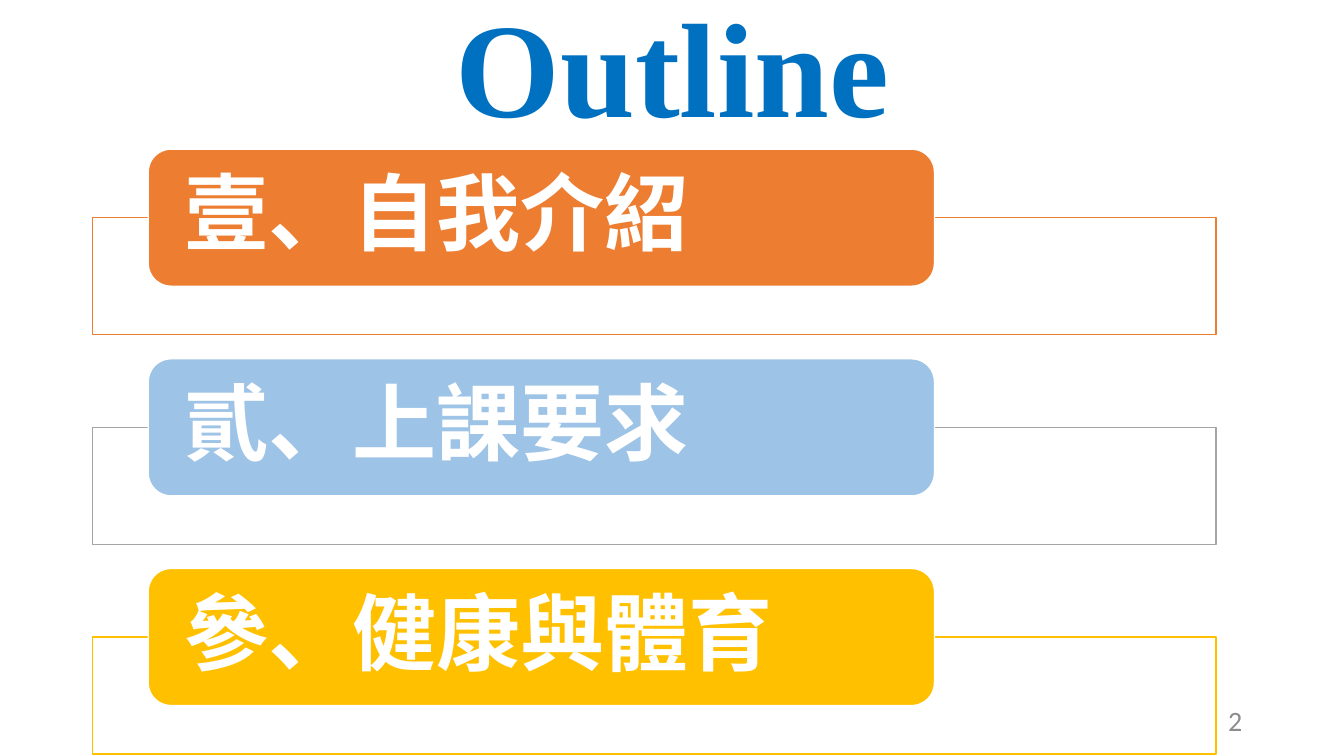
from lxml import etree
from pptx import Presentation, util as u
from pptx.dml.color import RGBColor
from pptx.enum import shapes, text
from pptx.oxml.ns import qn

COLORS = {
    "title": "0070C0",
    "number": "8C8C8C",
    "white": "FFFFFF",
    "orange": "ED7D31",
    "gray": "A5A5A5",
    "blue": "9DC3E6",
    "gold": "FFC000",
}
# Heading, label fill, frame line
SECTIONS = [
    ("壹、自我介紹", "orange", "orange"),
    ("貳、上課要求", "blue", "gray"),
    ("參、健康與體育", "gold", "gold"),
]
SECTION_PITCH = 2.08


def color(name):
    return RGBColor.from_string(COLORS[name])


def write(box, words, size, font, tint, align, bold=False):
    """Put one formatted line in a box, centred vertically."""
    frame = box.text_frame
    frame.word_wrap = True
    frame.auto_size = text.MSO_AUTO_SIZE.NONE
    frame.vertical_anchor = text.MSO_ANCHOR.MIDDLE
    frame.text = words
    para = frame.paragraphs[0]
    para.alignment = align
    span = para.runs[0]
    span.font.size = u.Pt(size)
    span.font.name = font
    span.font.bold = bold
    span.font.color.rgb = color(tint)
    # The East Asian font follows the Latin one
    east = etree.SubElement(span.font._element, qn("a:ea"))
    east.set("typeface", font)
    return para


def add_block(page, kind, left, top, width, height, fill, line):
    block = page.shapes.add_shape(
        kind, u.Inches(left), u.Inches(top), u.Inches(width), u.Inches(height))
    block.shadow.inherit = False
    block.fill.solid()
    block.fill.fore_color.rgb = color(fill)
    block.line.color.rgb = color(line)
    block.line.width = u.Pt(1)
    return block


def add_title(page, left, top, width, height):
    title = page.shapes.title
    title.left, title.top = u.Inches(left), u.Inches(top)
    title.width, title.height = u.Inches(width), u.Inches(height)
    para = write(title, "Outline", 96, "Times New Roman", "title",
                 text.PP_ALIGN.CENTER, bold=True)
    para.line_spacing = 0.9


def add_section(page, left, top, width, heading, fill, line):
    # Wide frame, slightly transparent
    frame = add_block(page, shapes.MSO_SHAPE.RECTANGLE,
                      left, top + 0.68, width, 1.16, "white", line)
    tint = frame.fill._xPr.find(qn("a:solidFill"))[0]
    etree.SubElement(tint, qn("a:alpha")).set("val", "90000")

    # Rounded label overlapping the frame's top edge
    label = add_block(page, shapes.MSO_SHAPE.ROUNDED_RECTANGLE,
                      left + 0.55, top, width * 0.7, 1.36, fill, "white")
    para = write(label, heading, 60, "Noto Sans CJK SC", "white",
                 text.PP_ALIGN.LEFT, bold=True)
    para.line_spacing = 0.9
    inner = label.text_frame
    inner.margin_left = inner.margin_right = u.Inches(0.29)
    inner.margin_top = inner.margin_bottom = 0


def add_page_number(page, left, top, width, height):
    box = page.shapes.add_textbox(
        u.Inches(left), u.Inches(top), u.Inches(width), u.Inches(height))
    write(box, "2", 20, "Calibri", "number", text.PP_ALIGN.RIGHT)


def main():
    deck = Presentation()
    deck.slide_width, deck.slide_height = u.Inches(13.33), u.Inches(7.5)
    page = deck.slides.add_slide(deck.slide_layouts.get_by_name("Title Only"))

    add_title(page, 0.92, 0.01, 11.5, 1.45)
    add_page_number(page, 9.42, 6.95, 3, 0.4)
    for index, section in enumerate(SECTIONS):
        add_section(page, 0.92, 1.48 + index * SECTION_PITCH, 11.14, *section)

    deck.save("out.pptx")


if __name__ == "__main__":
    main()
